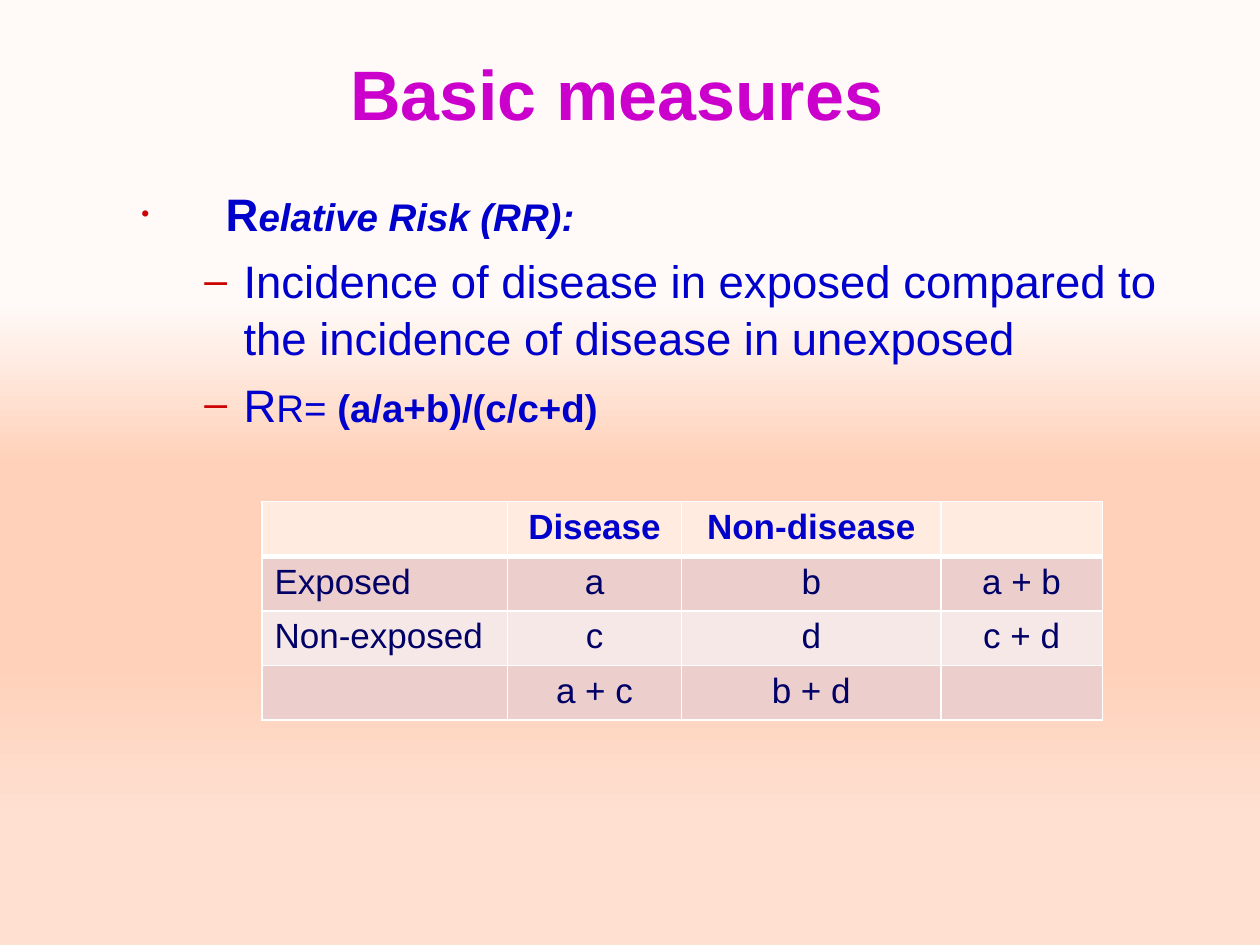
"""Build the slide on relative risk with its two-by-two table."""
from lxml import etree
from pptx import Presentation
from pptx.dml.color import RGBColor
from pptx.enum.text import MSO_ANCHOR, PP_ALIGN
from pptx.oxml.ns import qn
from pptx.util import Cm, Pt

CENTER, LEFT = PP_ALIGN.CENTER, PP_ALIGN.LEFT
MIDDLE = MSO_ANCHOR.MIDDLE
PURPLE = RGBColor(0xCC, 0x00, 0xCC)
BLUE = RGBColor(0x00, 0x00, 0xCC)
NAVY = RGBColor(0x00, 0x00, 0x66)
RED = RGBColor(0xCC, 0x00, 0x00)
WHITE = RGBColor(0xFF, 0xFF, 0xFF)
CREAM = RGBColor(0xFF, 0xEB, 0xE0)
ROSE = RGBColor(0xEC, 0xCE, 0xCC)
PALE = RGBColor(0xF6, 0xE8, 0xE7)
STOPS = [
    (32, RGBColor(0xFF, 0xFA, 0xF7)),
    (49, RGBColor(0xFF, 0xD1, 0xBA)),
    (70, RGBColor(0xFF, 0xD1, 0xBA)),
    (87, RGBColor(0xFF, 0xE0, 0xD1)),
]


def add(parent, tag, **attrs):
    node = etree.SubElement(parent, qn(tag))
    for key, value in attrs.items():
        node.set(key, str(value))
    return node


def write(par, text, size=26, color=BLUE, bold=False, italic=False):
    run = par.add_run()
    run.text = text
    font = run.font
    font.name, font.size = "Arial", Pt(size)
    font.bold, font.italic = bold, italic
    font.color.rgb = color


deck = Presentation()
deck.slide_width, deck.slide_height = Cm(25.4), Cm(19.05)
slide = deck.slides.add_slide(deck.slide_layouts[6])

back = slide.background.fill
back.gradient()
back.gradient_angle = 270
ramp = slide.element.find(".//" + qn("a:gsLst"))
for stop in list(ramp):
    ramp.remove(stop)
for place, color in STOPS:
    add(add(ramp, "a:gs", pos=place * 1000), "a:srgbClr", val=color)

title = slide.shapes.add_textbox(Cm(1), Cm(0.76), Cm(22.86), Cm(2.2)).text_frame
title.word_wrap = True
title.vertical_anchor = MIDDLE
title.paragraphs[0].alignment = CENTER
write(title.paragraphs[0], "Basic measures", size=40, color=PURPLE, bold=True)

body = slide.shapes.add_textbox(Cm(2.6), Cm(3.58), Cm(21.5), Cm(13.18)).text_frame
body.word_wrap = True
POINTS = [
    (0, "•", 50, 1.7, 1.7, [
        ("R", dict(bold=True)),
        ("elative Risk (RR):", dict(size=22, bold=True, italic=True)),
    ]),
    (1, "–", 90, 2.06, 0.79, [
        ("Incidence of disease in exposed compared to "
         "the incidence of disease in unexposed", {}),
    ]),
    (1, "–", 90, 2.06, 0.79, [
        ("R", {}),
        ("R= ", dict(size=22)),
        ("(a/a+b)/(c/c+d)", dict(size=22, bold=True)),
    ]),
]
for row, (level, mark, scale, margin, hang, parts) in enumerate(POINTS):
    par = body.add_paragraph() if row else body.paragraphs[0]
    props = par._p.get_or_add_pPr()
    props.set("marL", str(Cm(margin)))
    props.set("indent", str(-Cm(hang)))
    add(add(props, "a:buClr"), "a:srgbClr", val=RED)
    add(props, "a:buSzPct", val=scale * 1000)
    add(props, "a:buFont", typeface="Arial")
    add(props, "a:buChar", char=mark)
    par.level = level
    par.line_spacing = 1.05
    par.space_before = Pt(5.2 if row else 0)
    for text, style in parts:
        write(par, text, **style)

ROWS = [
    ["", "Disease", "Non-disease", ""],
    ["Exposed", "a", "b", "a + b"],
    ["Non-exposed", "c", "d", "c + d"],
    ["", "a + c", "b + d", ""],
]
WIDTHS = [4.95, 3.51, 5.23, 3.25]
FILLS = [CREAM, ROSE, PALE, ROSE]
HIGH = 1.05
table = slide.shapes.add_table(
    len(ROWS), len(WIDTHS), Cm(5.28), Cm(10.11),
    Cm(sum(WIDTHS)), Cm(HIGH * len(ROWS))).table
for col, width in enumerate(WIDTHS):
    table.columns[col].width = Cm(width)
for row, words in enumerate(ROWS):
    table.rows[row].height = Cm(HIGH)
    head = row == 0
    for col, word in enumerate(words):
        cell = table.cell(row, col)
        props = cell._tc.get_or_add_tcPr()
        for side in "LRTB":
            thick = (row, side) in [(0, "B"), (1, "T")]
            line = add(props, "a:ln" + side, w=Pt(3 if thick else 1))
            add(add(line, "a:solidFill"), "a:srgbClr", val=WHITE)
        cell.fill.solid()
        cell.fill.fore_color.rgb = FILLS[row]
        if word:
            par = cell.text_frame.paragraphs[0]
            par.alignment = CENTER if col else LEFT
            write(par, word, size=20, color=BLUE if head else NAVY, bold=head)

deck.save("out.pptx")
